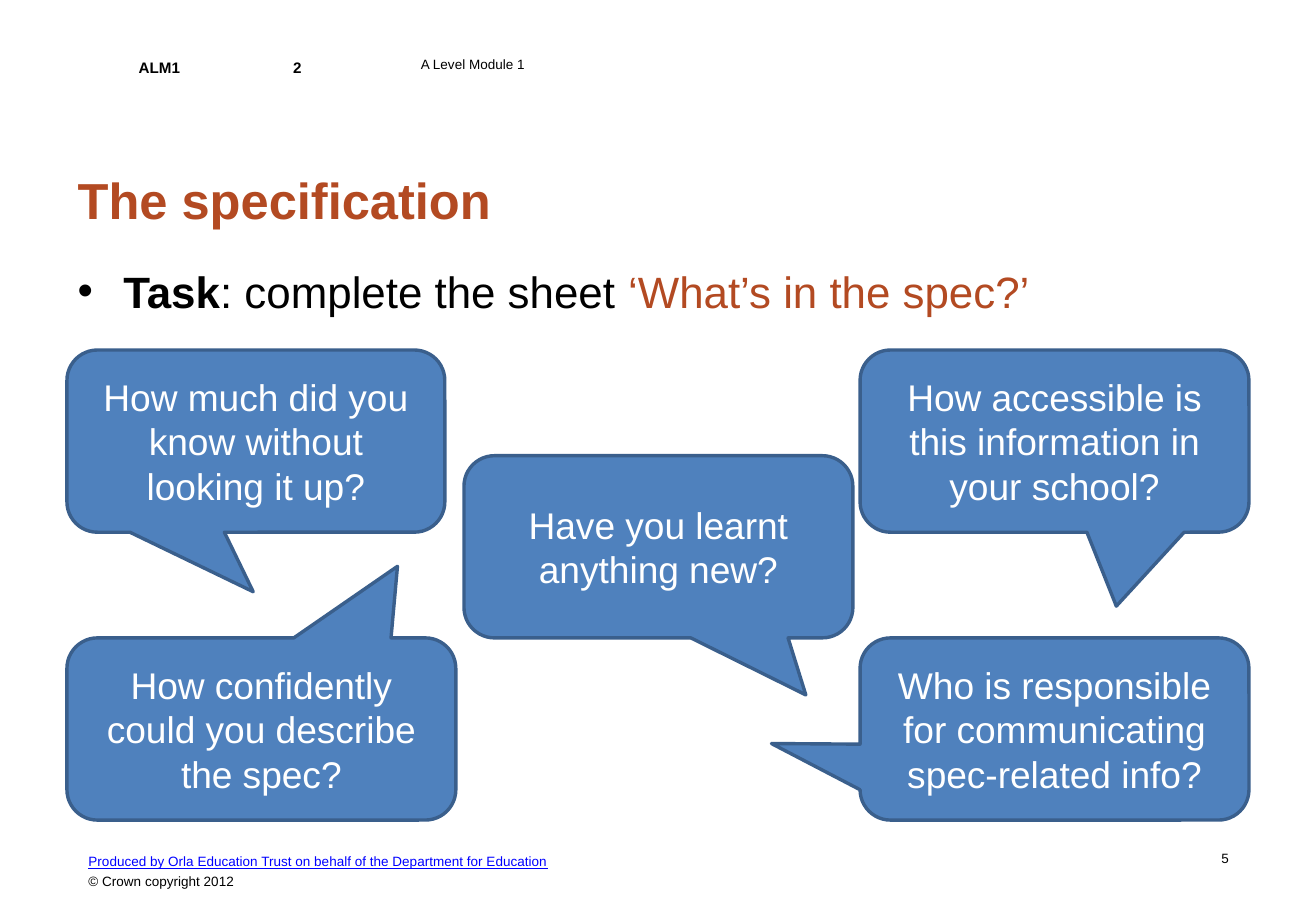
"""Build the slide on the specification task with its question bubbles."""
from pptx import Presentation as Deck
from pptx.dml.color import RGBColor as Color
from pptx.enum.shapes import MSO_SHAPE as Shape
from pptx.enum.text import MSO_ANCHOR as Anchor, MSO_AUTO_SIZE as Fit, PP_ALIGN as Align
from pptx.util import Cm, Pt

BLACK = Color(0x00, 0x00, 0x00)
WHITE = Color(0xFF, 0xFF, 0xFF)
RUST = Color(0xB3, 0x4A, 0x22)
LINK = Color(0x00, 0x00, 0xFF)
BLUE = Color(0x4F, 0x81, 0xBD)
EDGE = Color(0x3A, 0x5F, 0x8C)

LEFT, MID, RIGHT = 1.4, 9.7, 17.98
HIGH, CORE, LOW = 7.32, 9.53, 13.34
WIDE, TALL = 8.13, 3.81

BUBBLES = [
    ("How much did you know without looking it up?", LEFT, HIGH, 7.9, -0.007, 0.827),
    ("How confidently could you describe the spec?", LEFT, LOW, WIDE, 0.35, -0.893),
    ("Who is responsible for communicating spec-related info?", RIGHT, LOW, WIDE, -0.728, 0.08),
    ("Have you learnt anything new?", MID, CORE, WIDE, 0.379, 0.813),
    ("How accessible is this information in your school?", RIGHT, HIGH, WIDE, 0.159, 0.906),
]


def add_run(para, text, size, color=BLACK, bold=False, under=False):
    run = para.add_run()
    run.text = text
    font = run.font
    font.name, font.size, font.bold, font.underline = "Arial", Pt(size), bold, under
    font.color.rgb = color


def add_head(slide):
    widths = [1.83, 1.4, 1.65, 1.02, 6.43]
    frame = slide.shapes.add_table(1, len(widths), Cm(2.72), Cm(0.74), Cm(sum(widths)), Cm(1.24))
    table = frame.table
    table.first_row = table.horz_banding = False
    for col, width in zip(table.columns, widths):
        col.width = Cm(width)
    for cell in table.iter_cells():
        cell.fill.background()
        cell.vertical_anchor = Anchor.MIDDLE
        cell.margin_left = cell.margin_right = Cm(0.18)
        cell.margin_top = cell.margin_bottom = Cm(0)
    for index, text in ((0, "ALM1"), (2, "2")):
        para = table.cell(0, index).text_frame.paragraphs[0]
        para.line_spacing, para.space_after = Pt(14), Pt(3.7)
        add_run(para, text, 9, bold=True)
    add_run(table.cell(0, 4).text_frame.paragraphs[0], "A Level Module 1", 8)


def place_holder(shape, top, height, inset):
    shape.left, shape.top, shape.width, shape.height = Cm(1.37), Cm(top), Cm(24.77), Cm(height)
    frame = shape.text_frame
    frame.auto_size, frame.vertical_anchor = Fit.NONE, Anchor.TOP
    frame.margin_top = Cm(inset)
    para = frame.paragraphs[0]
    para.alignment, para.space_before = Align.LEFT, Pt(0)
    return para


def add_box(slide, left, width):
    box = slide.shapes.add_textbox(Cm(left), Cm(17.65), Cm(width), Cm(1.02))
    box.text_frame.word_wrap = True
    return box.text_frame


def add_foot(slide):
    frame = add_box(slide, 1.6, 16.51)
    first, last = frame.paragraphs[0], frame.add_paragraph()
    first.line_spacing = last.line_spacing = 1.2
    add_run(first, "Produced by Orla Education Trust on behalf of the Department for Education",
            8, LINK, under=True)
    add_run(last, "© Crown copyright 2012", 8)
    page = add_box(slide, 24.97, 0.97).paragraphs[0]
    page.alignment = Align.RIGHT
    add_run(page, "5", 8)


def add_bubble(slide, text, left, top, width, tip_x, tip_y):
    shape = slide.shapes.add_shape(Shape.ROUNDED_RECTANGULAR_CALLOUT,
                                   Cm(left), Cm(top), Cm(width), Cm(TALL))
    for index, value in enumerate((tip_x, tip_y, 0.167)):
        shape.adjustments[index] = value
    shape.shadow.inherit = False
    shape.fill.solid()
    shape.fill.fore_color.rgb = BLUE
    shape.line.color.rgb = EDGE
    shape.line.width = Pt(2)
    frame = shape.text_frame
    frame.word_wrap, frame.vertical_anchor = True, Anchor.MIDDLE
    para = frame.paragraphs[0]
    para.alignment = Align.CENTER
    add_run(para, text, 22, WHITE)


def main():
    deck = Deck()
    deck.slide_width, deck.slide_height = Cm(27.51), Cm(19.05)
    slide = deck.slides.add_slide(deck.slide_layouts[1])
    add_head(slide)
    add_foot(slide)
    title = place_holder(slide.shapes.title, 3.3, 2.03, 0.23)
    add_run(title, "The specification", 30, RUST, bold=True)
    task = place_holder(slide.placeholders[1], 5.33, 4.19, 0.2)
    add_run(task, "Task", 26, bold=True)
    add_run(task, ": complete the sheet", 26)
    add_run(task, " ‘What’s in the spec?’", 26, RUST)
    for bubble in BUBBLES:
        add_bubble(slide, *bubble)
    deck.save("out.pptx")


if __name__ == "__main__":
    main()
